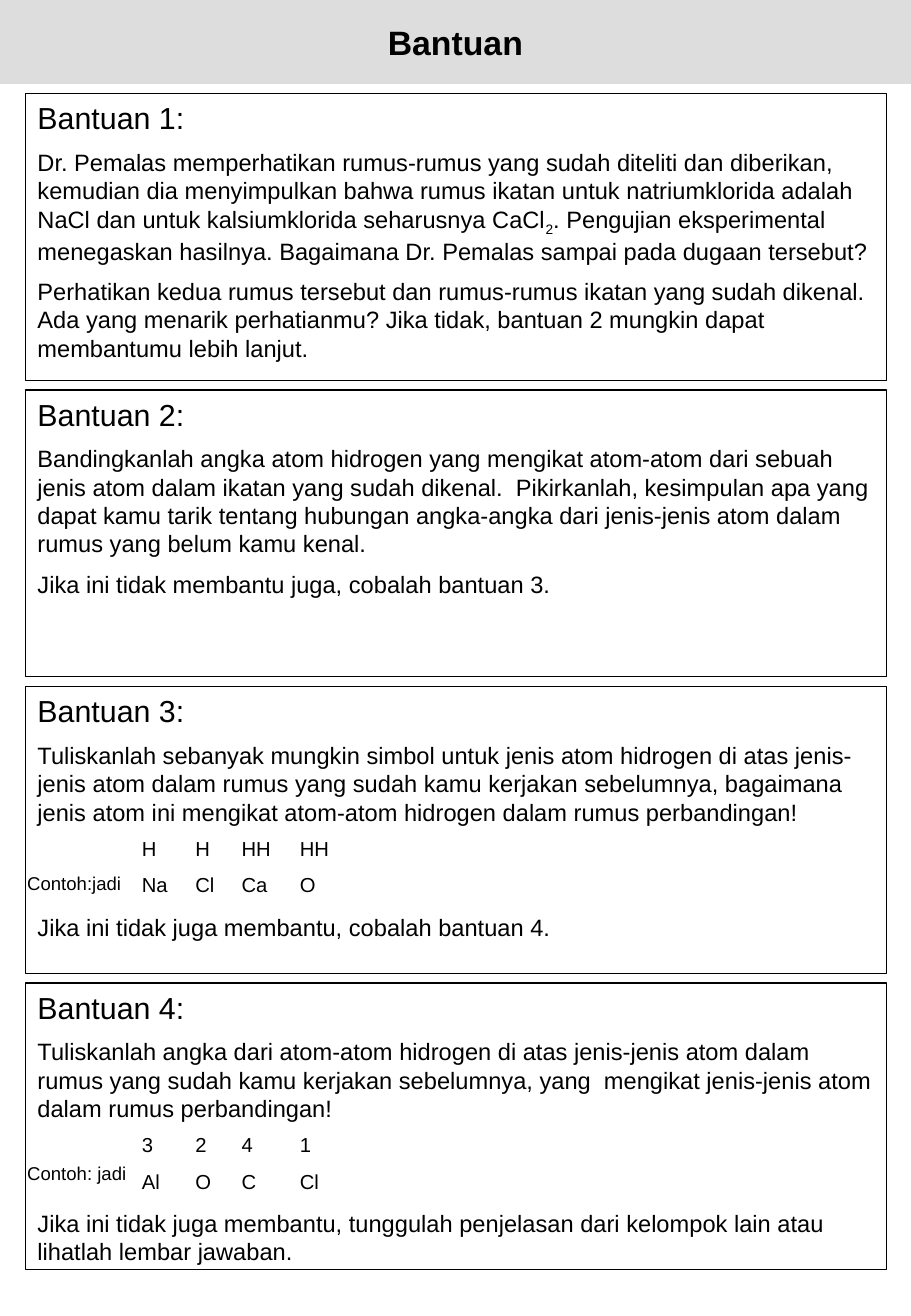
from pptx import Presentation
from pptx import util as u
from pptx.dml import color
from pptx.enum import shapes, text

presentation = Presentation()
presentation.slide_width = u.Pt(540)
presentation.slide_height = u.Pt(779.76)
slide = presentation.slides.add_slide(presentation.slide_layouts[6])


def rgb(value):
    return color.RGBColor.from_string(value)


def add_text(content, left, top, width, height, sizes=(14,), bold=False, fill=None,
             line=None, align=text.PP_ALIGN.LEFT, anchor=text.MSO_ANCHOR.TOP):
    if fill or line:
        shape = slide.shapes.add_shape(shapes.MSO_SHAPE.RECTANGLE, u.Pt(left), u.Pt(top),
                                       u.Pt(width), u.Pt(height))
        shape.shadow.inherit = False
        if fill:
            shape.fill.solid()
            shape.fill.fore_color.rgb = rgb(fill)
        else:
            shape.fill.background()
        if line:
            shape.line.color.rgb = rgb(line)
            shape.line.width = u.Pt(0.75)
        else:
            shape.line.fill.background()
    else:
        shape = slide.shapes.add_textbox(u.Pt(left), u.Pt(top), u.Pt(width), u.Pt(height))
    frame = shape.text_frame
    frame.word_wrap = True
    frame.vertical_anchor = anchor
    for number, words in enumerate(content.split("\n")):
        paragraph = frame.paragraphs[0] if number == 0 else frame.add_paragraph()
        paragraph.alignment = align
        paragraph.space_before = u.Pt(7 if number else 0)
        for part, piece in enumerate(words.split("|")):
            run = paragraph.add_run()
            run.text = piece
            run.font.name = "Arial"
            run.font.size = u.Pt(sizes[min(number, len(sizes) - 1)])
            run.font.bold = bold
            run.font.color.rgb = rgb("000000")
            if part % 2:
                run._r.get_or_add_rPr().set("baseline", "-25000")


add_text("Bantuan", 0, 0, 540, 49.68, sizes=(20,), bold=True, fill="DDDDDD",
         align=text.PP_ALIGN.CENTER, anchor=text.MSO_ANCHOR.MIDDLE)

card_left, card_width, card_height = 15.12, 510.48, 169.92
first_top, card_step = 55.44, 175.68

cards = [
    "Dr. Pemalas memperhatikan rumus-rumus yang sudah diteliti dan diberikan, kemudian dia "
    "menyimpulkan bahwa rumus ikatan untuk natriumklorida adalah NaCl dan untuk kalsiumklorida "
    "seharusnya CaCl|2|. Pengujian eksperimental menegaskan hasilnya. Bagaimana Dr. Pemalas "
    "sampai pada dugaan tersebut?\n"
    "Perhatikan kedua rumus tersebut dan rumus-rumus ikatan yang sudah dikenal. Ada yang menarik "
    "perhatianmu? Jika tidak, bantuan 2 mungkin dapat membantumu lebih lanjut.",
    "Bandingkanlah angka atom hidrogen yang mengikat atom-atom dari sebuah jenis atom dalam "
    "ikatan yang sudah dikenal.  Pikirkanlah, kesimpulan apa yang dapat kamu tarik tentang "
    "hubungan angka-angka dari jenis-jenis atom dalam rumus yang belum kamu kenal.\n"
    "Jika ini tidak membantu juga, cobalah bantuan 3.",
    "Tuliskanlah sebanyak mungkin simbol untuk jenis atom hidrogen di atas jenis-jenis atom dalam "
    "rumus yang sudah kamu kerjakan sebelumnya, bagaimana jenis atom ini mengikat atom-atom "
    "hidrogen dalam rumus perbandingan!",
    "Tuliskanlah angka dari atom-atom hidrogen di atas jenis-jenis atom dalam rumus yang sudah "
    "kamu kerjakan sebelumnya, yang  mengikat jenis-jenis atom dalam rumus perbandingan!",
]
for index, body in enumerate(cards):
    add_text(f"Bantuan {index + 1}:\n{body}", card_left, first_top + index * card_step,
             card_width, card_height, sizes=(18, 14), line="000000")

columns = [(77.04, 31.68), (108.72, 27.36), (136.08, 34.56), (170.64, 155.52)]
examples = [
    (2, "Contoh:jadi", 106.56, [["H", "H", "HH", "HH"], ["Na", "Cl", "Ca", "O"]],
     "Jika ini tidak juga membantu, cobalah bantuan 4."),
    (3, "Contoh: jadi", 102.24, [["3", "2", "4", "1"], ["Al", "O", "C", "Cl"]],
     "Jika ini tidak juga membantu, tunggulah penjelasan dari kelompok lain atau lihatlah "
     "lembar jawaban."),
]
for index, label, label_offset, rows, closing in examples:
    card_top = first_top + index * card_step
    add_text(label, 9, card_top + label_offset, 78, 26, sizes=(11,))
    for row, symbols in enumerate(rows):
        for symbol, (left, width) in zip(symbols, columns):
            add_text(symbol, left, card_top + 84.96 + row * 21.6, width, 21.6, sizes=(12,))
    add_text(closing, card_left, card_top + 130.32, card_width, 40)

presentation.save("out.pptx")
